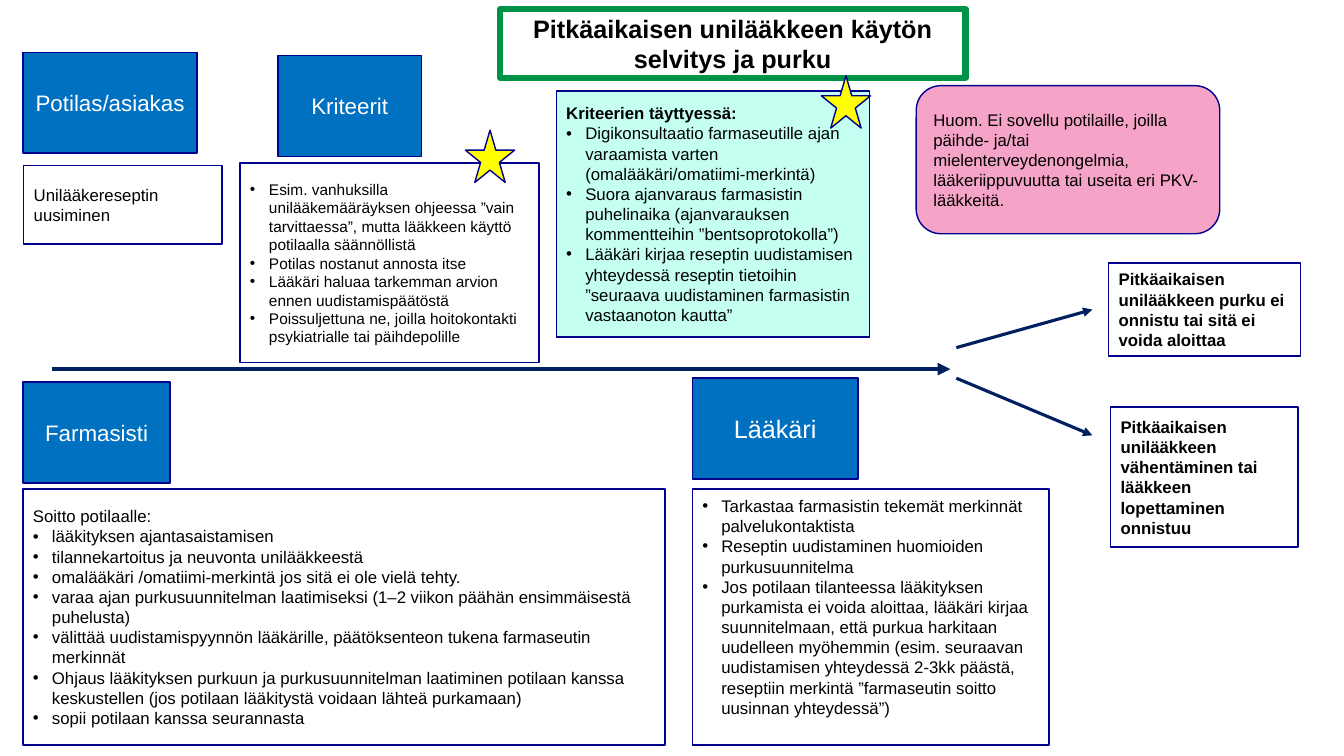
import pptx
import pptx.util
import pptx.dml.color
import pptx.enum.shapes
import pptx.enum.text
import pptx.oxml.ns
import lxml.etree

Cm = pptx.util.Cm
Pt = pptx.util.Pt
Kind = pptx.enum.shapes.MSO_SHAPE
Align = pptx.enum.text.PP_ALIGN


class Theme:
    font = "Arial"
    blue, navy, edge = "0070C0", "002060", "00008D"
    green, mint, pink = "009246", "C4FFF2", "F5A3C7"
    yellow, white, black = "FFFF00", "FFFFFF", "000000"
    small, body, head, title = 11, 12, 16, 18
    thin, medium, thick, frame = 1, 2.25, 3, 4.5
    indent = Cm(0.48)


def color(code):
    return pptx.dml.color.RGBColor.from_string(code)


def child(parent, tag, **attrs):
    return lxml.etree.SubElement(parent, pptx.oxml.ns.qn(tag), attrs)


class Board:
    def __init__(self, slide, theme):
        self.shapes = slide.shapes
        self.theme = theme

    def shape(self, kind, place, fill=None, edge=None, width=None):
        item = self.shapes.add_shape(kind, *map(Cm, place))
        item.shadow.inherit = False
        if fill:
            item.fill.solid()
            item.fill.fore_color.rgb = color(fill)
        else:
            item.fill.background()
        item.line.color.rgb = color(edge or self.theme.edge)
        item.line.width = Pt(width or self.theme.thin)
        return item

    def letter(self, item, lines, size, ink, align=Align.LEFT, bold=False):
        """Fill a shape with paragraphs; a line that starts with • becomes a bullet."""
        frame = item.text_frame
        frame.word_wrap = True
        frame.vertical_anchor = pptx.enum.text.MSO_ANCHOR.MIDDLE
        for i, line in enumerate(lines):
            para = frame.paragraphs[0] if i == 0 else frame.add_paragraph()
            para.text = line.removeprefix("•")
            para.alignment = align
            if line.startswith("•"):
                self.bullet(para)
            para.font.name = self.theme.font
            para.font.size = Pt(size)
            para.font.color.rgb = color(ink)
            para.font.bold = bold and i == 0

    def bullet(self, para):
        props = para._p.get_or_add_pPr()
        props.set("marL", str(self.theme.indent))
        props.set("indent", str(-self.theme.indent))
        child(props, "a:buFont", typeface=self.theme.font)
        child(props, "a:buChar", char="•")

    def label(self, text, left, top, width, size=None):
        item = self.shape(Kind.RECTANGLE, (left, top, width, 2.54), self.theme.blue)
        self.letter(item, [text], size or self.theme.head, self.theme.white, Align.CENTER)

    def note(self, place, lines, fill=None, size=None, bold=False, kind=Kind.RECTANGLE):
        item = self.shape(kind, place, fill)
        self.letter(item, lines, size or self.theme.body, self.theme.black, bold=bold)
        return item

    def title(self, text, place):
        item = self.shape(Kind.RECTANGLE, place, None, self.theme.green, self.theme.frame)
        self.letter(item, [text], self.theme.title, self.theme.black, Align.CENTER, True)

    def star(self, left, top):
        self.shape(Kind.STAR_5_POINT, (left, top, 1.24, 1.32), self.theme.yellow)

    def arrow(self, ends, width):
        item = self.shapes.add_connector(
            pptx.enum.shapes.MSO_CONNECTOR.STRAIGHT, *map(Cm, ends))
        item.line.color.rgb = color(self.theme.navy)
        item.line.width = Pt(width)
        props = item._element.spPr
        child(props.find(pptx.oxml.ns.qn("a:ln")), "a:tailEnd", type="triangle")
        child(props, "a:effectLst")


def main():
    deck = pptx.Presentation()
    deck.slide_width, deck.slide_height = Cm(33.87), Cm(19.05)
    theme = Theme()
    board = Board(deck.slides.add_slide(deck.slide_layouts[6]), theme)

    board.label("Potilas/asiakas", 0.58, 1.32, 4.39)
    board.label("Kriteerit", 7.01, 1.4, 3.61)
    board.arrow((1.32, 9.3, 23.95, 9.3), theme.thick)
    board.label("Farmasisti", 0.58, 9.63, 3.71)
    board.label("Lääkäri", 17.45, 9.53, 4.17, theme.title)

    board.note((0.6, 4.17, 5, 1.98), ["Unilääkereseptin uusiminen"])
    board.note((6.05, 4.11, 7.54, 5.03), [
        "•Esim. vanhuksilla unilääkemääräyksen ohjeessa ”vain tarvittaessa”, "
        "mutta lääkkeen käyttö potilaalla säännöllistä",
        "•Potilas nostanut annosta itse",
        "•Lääkäri haluaa tarkemman arvion ennen uudistamispäätöstä",
        "•Poissuljettuna ne, joilla hoitokontakti psykiatrialle tai päihdepolille",
    ], size=theme.small)
    board.title("Pitkäaikaisen unilääkkeen käytön selvitys ja purku",
                (12.6, 0.23, 11.73, 1.73))
    board.note((14.02, 2.29, 7.9, 6.2), [
        "Kriteerien täyttyessä:",
        "•Digikonsultaatio farmaseutille ajan varaamista varten "
        "(omalääkäri/omatiimi-merkintä)",
        "•Suora ajanvaraus farmasistin puhelinaika "
        "(ajanvarauksen kommentteihin ”bentsoprotokolla”)",
        "•Lääkäri kirjaa reseptin uudistamisen yhteydessä reseptin tietoihin "
        "”seuraava uudistaminen farmasistin vastaanoton kautta”",
    ], theme.mint, bold=True)
    board.star(20.7, 1.91)
    board.star(11.73, 3.28)
    board.arrow((24.1, 9.53, 27.53, 10.97), theme.medium)
    board.arrow((24.1, 8.76, 27.53, 7.8), theme.medium)

    board.note((0.58, 12.32, 16.18, 6.45), [
        "Soitto potilaalle:",
        "•lääkityksen ajantasaistamisen",
        "•tilannekartoitus ja neuvonta unilääkkeestä",
        "•omalääkäri /omatiimi-merkintä jos sitä ei ole vielä tehty.",
        "•varaa ajan purkusuunnitelman laatimiseksi "
        "(1–2 viikon päähän ensimmäisestä puhelusta)",
        "•välittää uudistamispyynnön lääkärille, päätöksenteon tukena "
        "farmaseutin merkinnät",
        "•Ohjaus lääkityksen purkuun ja purkusuunnitelman laatiminen potilaan kanssa "
        "keskustellen (jos potilaan lääkitystä voidaan lähteä purkamaan)",
        "•sopii potilaan kanssa seurannasta",
    ], theme.white)
    doctor = board.note((17.45, 12.32, 8.99, 6.45), [
        "•Tarkastaa farmasistin tekemät merkinnät palvelukontaktista",
        "•Reseptin uudistaminen huomioiden purkusuunnitelma",
        "•Jos potilaan tilanteessa lääkityksen purkamista ei voida aloittaa, lääkäri "
        "kirjaa suunnitelmaan, että purkua harkitaan uudelleen myöhemmin "
        "(esim. seuraavan uudistamisen yhteydessä 2-3kk päästä, reseptiin merkintä "
        "”farmaseutin soitto uusinnan yhteydessä”)",
    ])
    doctor.text_frame.margin_bottom = Cm(0.64)

    board.note((27.94, 6.63, 4.83, 2.34), [
        "Pitkäaikaisen unilääkkeen purku ei onnistu tai sitä ei voida aloittaa",
    ], bold=True)
    board.note((27.99, 10.26, 4.72, 3.53), [
        "Pitkäaikaisen unilääkkeen vähentäminen tai lääkkeen lopettaminen onnistuu",
    ], bold=True)
    board.note((23.09, 2.16, 7.65, 3.73), [
        "Huom. Ei sovellu potilaille, joilla päihde- ja/tai mielenterveydenongelmia, "
        "lääkeriippuvuutta tai useita eri PKV-lääkkeitä.",
    ], theme.pink, kind=Kind.ROUNDED_RECTANGLE)

    deck.save("out.pptx")


if __name__ == "__main__":
    main()
